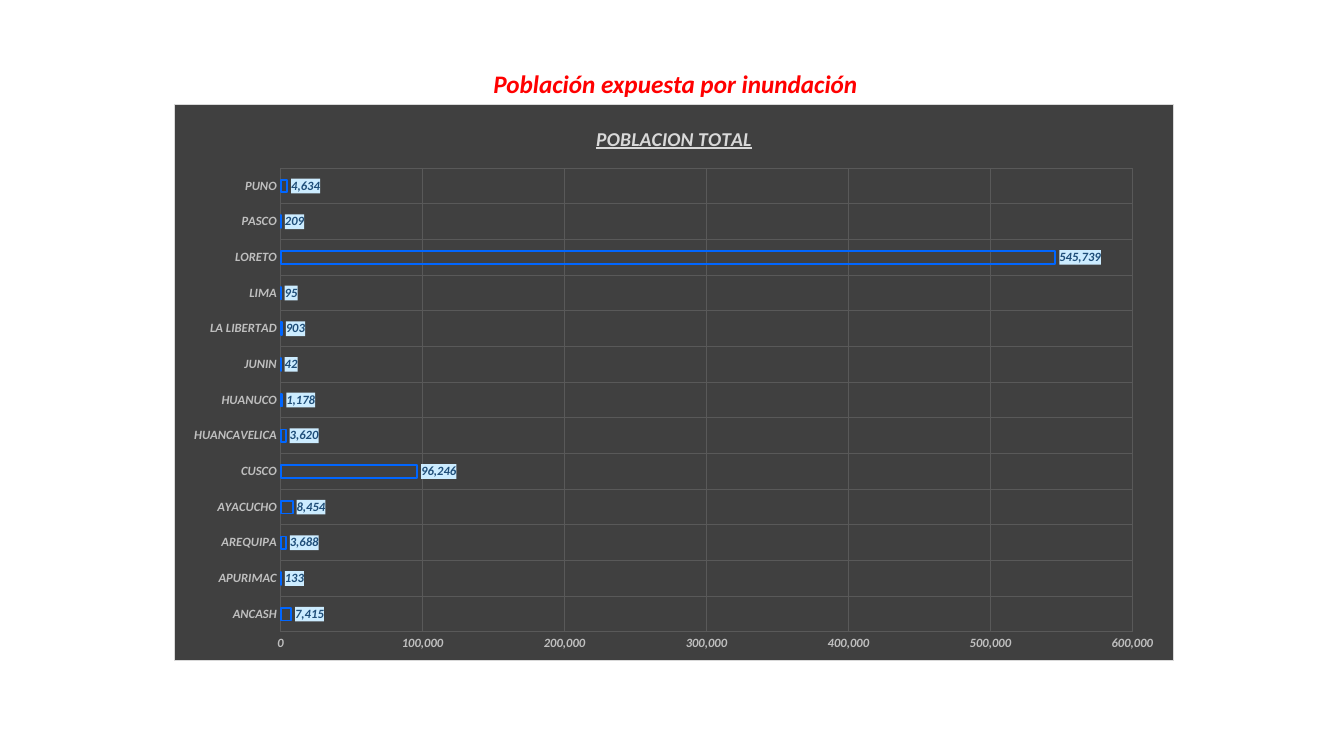
import lxml.etree
import pptx
import pptx.chart.data
import pptx.dml.color
import pptx.enum.chart
import pptx.enum.dml
import pptx.enum.text
import pptx.oxml
import pptx.oxml.ns
import pptx.util

Pt = pptx.util.Pt
RGB = pptx.dml.color.RGBColor
qn = pptx.oxml.ns.qn

RED = RGB(0xFF, 0x00, 0x00)
DARK = RGB(0x40, 0x40, 0x40)
GRID = RGB(0x59, 0x59, 0x59)
AXIS_TEXT = RGB(0xBF, 0xBF, 0xBF)
BORDER = RGB(0xD9, 0xD9, 0xD9)
BAR_LINE = RGB(0x00, 0x66, 0xFF)
LABEL_TEXT = RGB(0x1F, 0x4E, 0x79)
LABEL_FILL = RGB(0xCC, 0xEC, 0xFF)

FONT = "Calibri"
NUMBER_FORMAT = "#,##0"
POPULATION = {
    "ANCASH": 7415, "APURIMAC": 133, "AREQUIPA": 3688, "AYACUCHO": 8454,
    "CUSCO": 96246, "HUANCAVELICA": 3620, "HUANUCO": 1178, "JUNIN": 42,
    "LA LIBERTAD": 903, "LIMA": 95, "LORETO": 545739, "PASCO": 209,
    "PUNO": 4634,
}


def style_font(font, size, color):
    font.name = FONT
    font.size = Pt(size)
    font.bold = font.italic = True
    font.color.rgb = color


def shape_properties(fill, line=None):
    """Return a c:spPr element with a solid fill and an optional 0.75 pt line."""
    sp_pr = pptx.oxml.parse_xml(
        f'<c:spPr {pptx.oxml.ns.nsdecls("c", "a")}>'
        f'<a:solidFill><a:srgbClr val="{fill}"/></a:solidFill></c:spPr>')
    if line is not None:
        ln = lxml.etree.SubElement(sp_pr, qn("a:ln"), w=str(Pt(0.75)))
        solid = lxml.etree.SubElement(ln, qn("a:solidFill"))
        lxml.etree.SubElement(solid, qn("a:srgbClr"), val=str(line))
    return sp_pr


def place_plot(chart, x, y, w, h):
    """Fix the inner plot area, in fractions of the chart."""
    plot_area = chart.element.find(".//" + qn("c:plotArea"))
    for old in plot_area.findall(qn("c:layout")):
        plot_area.remove(old)
    layout = lxml.etree.Element(qn("c:layout"))
    manual = lxml.etree.SubElement(layout, qn("c:manualLayout"))
    settings = {"layoutTarget": "inner", "xMode": "edge", "yMode": "edge",
                "x": x, "y": y, "w": w, "h": h}
    for name, value in settings.items():
        lxml.etree.SubElement(manual, qn("c:" + name), val=str(value))
    plot_area.insert(0, layout)


def style_axis(axis):
    axis.major_tick_mark = axis.minor_tick_mark = pptx.enum.chart.XL_TICK_MARK.NONE
    axis.format.line.fill.background()
    axis.has_major_gridlines = True
    grid = axis.major_gridlines.format.line
    grid.color.rgb = GRID
    grid.width = Pt(0.75)
    style_font(axis.tick_labels.font, 9, AXIS_TEXT)


def style_bars(plot):
    plot.vary_by_categories = False
    plot.gap_width = 182
    plot.overlap = -50
    bars = plot.series[0].format
    bars.fill.background()
    bars.line.color.rgb = BAR_LINE
    bars.line.width = Pt(1.25)

    labels = plot.series[0].data_labels
    labels.show_value = True
    labels.number_format = NUMBER_FORMAT
    labels.number_format_is_linked = False
    labels.position = pptx.enum.chart.XL_LABEL_POSITION.OUTSIDE_END
    style_font(labels.font, 9, LABEL_TEXT)
    labels.font.fill.solid()
    labels.font.color.rgb = LABEL_TEXT
    text = plot.series[0].data_labels.element.find(qn("c:txPr")) if hasattr(
        labels, "element") else labels.font._element.getparent().getparent().getparent()
    text.addprevious(shape_properties(LABEL_FILL))


def add_heading(slide, left, top, width, height):
    title = slide.shapes.title
    title.left, title.top, title.width, title.height = map(Pt, (left, top, width, height))
    tf = title.text_frame
    tf.text = "Población expuesta por inundación"
    tf.word_wrap = False
    tf.vertical_anchor = pptx.enum.text.MSO_ANCHOR.TOP
    p = tf.paragraphs[0]
    p.alignment = pptx.enum.text.PP_ALIGN.CENTER
    style_font(p.runs[0].font, 18, RED)


def add_population_chart(slide, left, top, width, height):
    data = pptx.chart.data.CategoryChartData(number_format=NUMBER_FORMAT)
    data.categories = list(POPULATION)
    data.add_series("POBLACION TOTAL", list(POPULATION.values()))
    chart = slide.shapes.add_chart(
        pptx.enum.chart.XL_CHART_TYPE.BAR_CLUSTERED,
        Pt(left), Pt(top), Pt(width), Pt(height), data).chart
    chart.has_legend = False
    chart.font.name = FONT
    chart.font.size = Pt(10)
    chart.element.find(qn("c:chart")).addnext(shape_properties(DARK, BORDER))

    chart.has_title = True
    tf = chart.chart_title.text_frame
    tf.text = "POBLACION TOTAL"
    font = tf.paragraphs[0].runs[0].font
    style_font(font, 14, BORDER)
    font.underline = True

    style_axis(chart.category_axis)
    style_axis(chart.value_axis)
    chart.value_axis.minimum_scale = 0
    chart.value_axis.maximum_scale = 600000
    chart.value_axis.major_unit = 100000
    chart.value_axis.tick_labels.number_format = NUMBER_FORMAT
    chart.value_axis.tick_labels.number_format_is_linked = False
    style_bars(chart.plots[0])
    place_plot(chart, 0.106, 0.114, 0.853, 0.834)


def main():
    prs = pptx.Presentation()
    prs.slide_width, prs.slide_height = Pt(960), Pt(540)
    slide = prs.slides.add_slide(prs.slide_layouts[5])
    add_heading(slide, 343.5, 45.5, 278, 29)
    add_population_chart(slide, 124.5, 74.5, 714, 398)
    prs.save("out.pptx")


if __name__ == "__main__":
    main()
